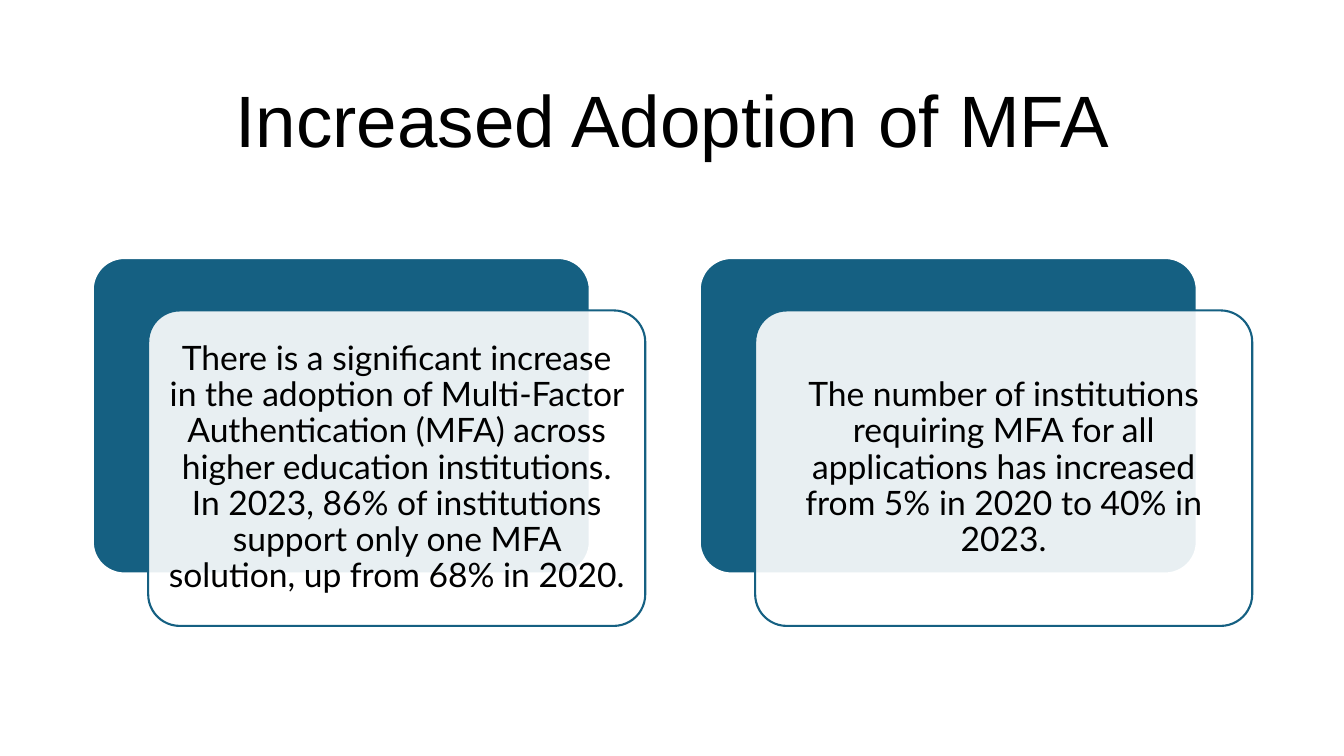
from lxml import etree
from pptx import Presentation
from pptx.dml.color import RGBColor
from pptx.enum.shapes import MSO_SHAPE
from pptx.enum.text import MSO_ANCHOR, MSO_AUTO_SIZE, PP_ALIGN
from pptx.oxml.ns import qn
from pptx.util import Emu, Pt

TITLE = "Increased Adoption of MFA"
CARDS = [
    "There is a significant increase in the adoption of Multi-Factor Authentication (MFA) "
    "across higher education institutions. In 2023, 86% of institutions support only one "
    "MFA solution, up from 68% in 2020.",
    "The number of institutions requiring MFA for all applications has increased "
    "from 5% in 2020 to 40% in 2023.",
]

ROUNDED = MSO_SHAPE.ROUNDED_RECTANGLE
MIDDLE = MSO_ANCHOR.MIDDLE
CENTER = PP_ALIGN.CENTER
NO_FIT = MSO_AUTO_SIZE.NONE
BLACK, WHITE, TEAL = "000000", "FFFFFF", "156082"

PX = 9144
LEFT, TOP = 92, 256
CARD_WIDTH, CARD_HEIGHT = 493, 313
SHIFT_X, SHIFT_Y = 55, 52
PITCH = 602
INSET = 10


def px(length):
    return Emu(length * PX)


def color(value):
    return RGBColor.from_string(value)


def write(shape, text, font, size):
    frame = shape.text_frame
    frame.word_wrap = True
    frame.auto_size = NO_FIT
    frame.vertical_anchor = MIDDLE
    frame.text = text
    para = frame.paragraphs[0]
    para.alignment = CENTER
    para.line_spacing = 0.9
    para.font.name = font
    para.font.size = Pt(size)
    para.font.color.rgb = color(BLACK)


def add_card(page, left, top, fill, line):
    card = page.shapes.add_shape(ROUNDED, px(left), px(top), px(CARD_WIDTH), px(CARD_HEIGHT))
    card.adjustments[0] = 0.1
    card.shadow.inherit = False
    card.fill.solid()
    card.fill.fore_color.rgb = color(fill)
    card.line.color.rgb = color(line)
    card.line.width = Pt(1.5)
    return card


def set_opacity(shape, percent):
    fill_color = shape.fill._xPr.find(qn("a:solidFill"))[0]
    etree.SubElement(fill_color, qn("a:alpha"), val=str(percent * 1000))


deck = Presentation()
deck.slide_width, deck.slide_height = px(1333), px(750)
page = deck.slides.add_slide(deck.slide_layouts[5])

title = page.shapes.title
title.left, title.top, title.width, title.height = px(LEFT), px(61), px(1150), px(124)
write(title, TITLE, "Arial", 52)

for index, text in enumerate(CARDS):
    left = LEFT + index * PITCH
    add_card(page, left, TOP, TEAL, WHITE)
    front = add_card(page, left + SHIFT_X, TOP + SHIFT_Y, WHITE, TEAL)
    set_opacity(front, 90)
    frame = front.text_frame
    frame.margin_left = frame.margin_right = px(INSET)
    frame.margin_top = frame.margin_bottom = px(INSET)
    write(front, text, "Lato", 24)

deck.save("out.pptx")
